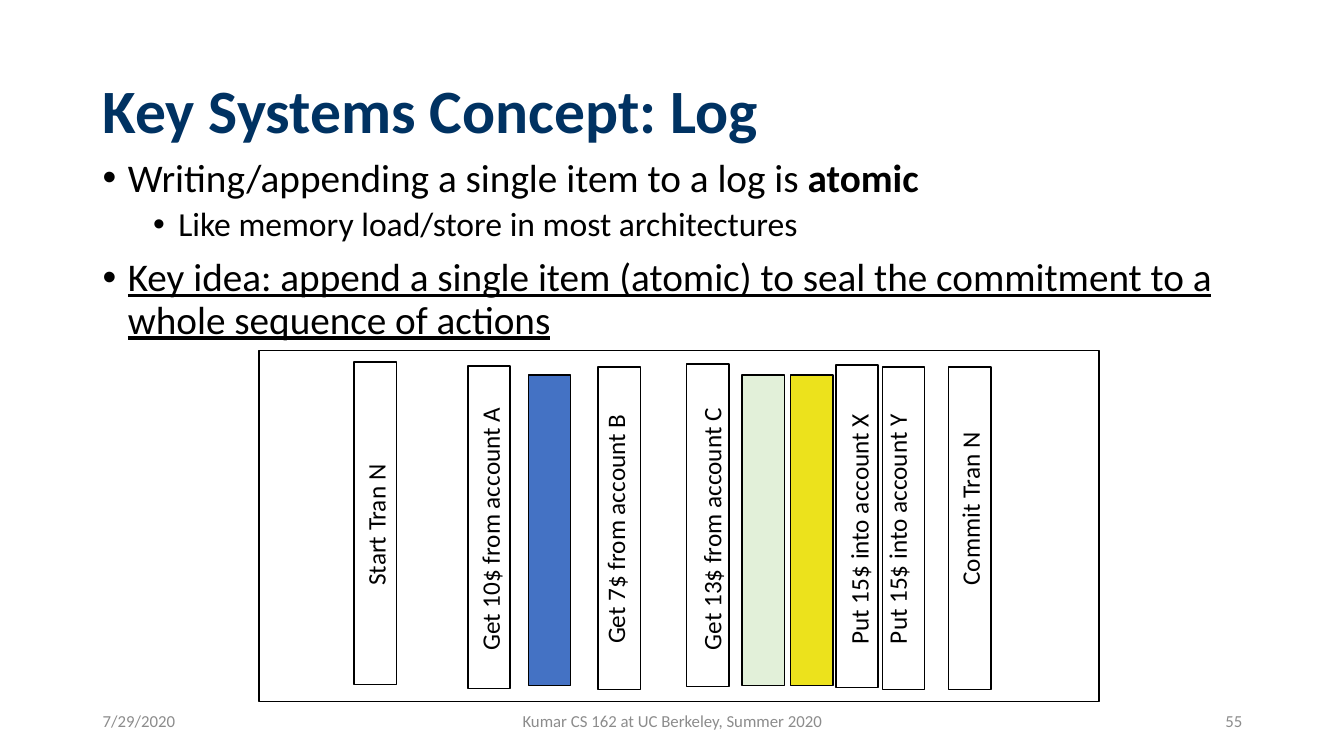
import pptx
import pptx.dml.color
import pptx.enum.shapes
import pptx.enum.text
import pptx.oxml.ns
import pptx.util
from lxml import etree
from pptx.util import Inches

ALIGN = pptx.enum.text.PP_ALIGN
ANCHOR = pptx.enum.text.MSO_ANCHOR


def color(hex_value):
    return pptx.dml.color.RGBColor.from_string(hex_value)


def add_text(left, top, width, height, paragraphs, **frame_format):
    """Each paragraph is (runs, paragraph format); each run is (text, font format)."""
    box = slide.shapes.add_textbox(*map(Inches, (left, top, width, height)))
    for key, value in ({"word_wrap": True} | frame_format).items():
        setattr(box.text_frame, key, value)
    for index, (runs, paragraph_format) in enumerate(paragraphs):
        paragraph = box.text_frame.add_paragraph() if index else box.text_frame.paragraphs[0]
        for key, value in paragraph_format.items():
            setattr(paragraph, key, value)
        for text, font_format in runs:
            run = paragraph.add_run()
            run.text = text
            for key, value in ({"name": "Calibri"} | font_format).items():
                if key == "color":
                    run.font.color.rgb = color(value)
                else:
                    setattr(run.font, key, value)
    return box


presentation = pptx.Presentation()
presentation.slide_width, presentation.slide_height = Inches(13.33), Inches(7.5)
slide = presentation.slides.add_slide(presentation.slide_layouts[6])

# Title
heading_font = {"size": pptx.util.Pt(44), "bold": True, "color": "003262"}
add_text(0.92, 0.4, 11.5, 1.45,
         [([("Key Systems Concept: Log", heading_font)], {"line_spacing": 0.9})],
         vertical_anchor=ANCHOR.MIDDLE)

# Bulleted points
point_font = {"size": pptx.util.Pt(28), "color": "000000"}
detail_font = point_font | {"size": pptx.util.Pt(24)}
point_format = {"line_spacing": 0.9, "space_before": pptx.util.Pt(10)}
detail_format = {"line_spacing": 0.9, "space_before": pptx.util.Pt(5), "level": 1}
points = add_text(0.92, 1.52, 11.5, 2.22, [
    ([("Writing/appending a single item to a log is ", point_font),
      ("atomic", point_font | {"bold": True})], point_format),
    ([("Like memory load/store in most architectures", detail_font)], detail_format),
    ([("Key idea: append a single item (atomic) to seal the commitment to a "
       "whole sequence of actions", point_font | {"underline": True})], point_format),
])
for point in points.text_frame.paragraphs:
    properties = point._p.get_or_add_pPr()
    properties.set("marL", str(Inches(0.25 + 0.5 * point.level)))
    properties.set("indent", str(Inches(-0.25)))
    etree.SubElement(properties, pptx.oxml.ns.qn("a:buFont"), typeface="Arial")
    etree.SubElement(properties, pptx.oxml.ns.qn("a:buChar"), char="•")

# Footer
footer_font = {"size": pptx.util.Pt(12), "color": "8C8C8C"}
for left, width, text, alignment in [
    (0.92, 3, "7/29/2020", ALIGN.LEFT),
    (4.42, 4.5, "Kumar CS 162 at UC Berkeley, Summer 2020", ALIGN.CENTER),
    (9.42, 3, "55", ALIGN.RIGHT),
]:
    add_text(left, 6.95, width, 0.4, [([(text, footer_font)], {"alignment": alignment})],
             vertical_anchor=ANCHOR.MIDDLE)

# Log frame and its entries: left, top, width, height, fill
entry_width, entry_height, other_height = 0.42, 3.2, 3.08
log_parts = [(2.57, 3.48, 8.33, 3.48, "FFFFFF")]
log_parts += [(left, 3.72, entry_width, other_height, fill)
              for left, fill in [(5.24, "4472C4"), (7.36, "E2F0D9"), (7.84, "ECE21C")]]
log_parts += [(left, top, entry_width, entry_height, None)
              for left, top in [(4.64, 3.63), (5.93, 3.64), (6.81, 3.61), (8.29, 3.62),
                                (8.75, 3.64), (3.51, 3.59), (9.41, 3.64)]]
for left, top, width, height, fill in log_parts:
    entry = slide.shapes.add_shape(pptx.enum.shapes.MSO_SHAPE.RECTANGLE,
                                   *map(Inches, (left, top, width, height)))
    entry.shadow.inherit = False
    entry.line.color.rgb = color("000000")
    entry.line.width = pptx.util.Pt(1)
    if fill:
        entry.fill.solid()
        entry.fill.fore_color.rgb = color(fill)
    else:
        entry.fill.background()

# Entry labels, turned to read upwards
label_font = {"size": pptx.util.Pt(18), "color": "000000"}
for left, top, width, text in [
    (3.54, 5.05, 2.64, "Get 10$ from account A"),
    (4.85, 5.05, 2.5, "Get 7$ from account B"),
    (5.74, 5.05, 2.63, "Get 13$ from account C"),
    (7.26, 5.05, 2.51, "Put 15$ into account X"),
    (7.64, 5.05, 2.51, "Put 15$ into account Y"),
    (3.02, 5.01, 1.41, "Start Tran N"),
    (8.75, 4.85, 1.74, "Commit Tran N"),
]:
    label = add_text(left, top, width, 0.4,
                     [([(text, label_font)], {"alignment": ALIGN.CENTER})],
                     word_wrap=False,
                     auto_size=pptx.enum.text.MSO_AUTO_SIZE.SHAPE_TO_FIT_TEXT)
    label.rotation = 270

presentation.save("out.pptx")
